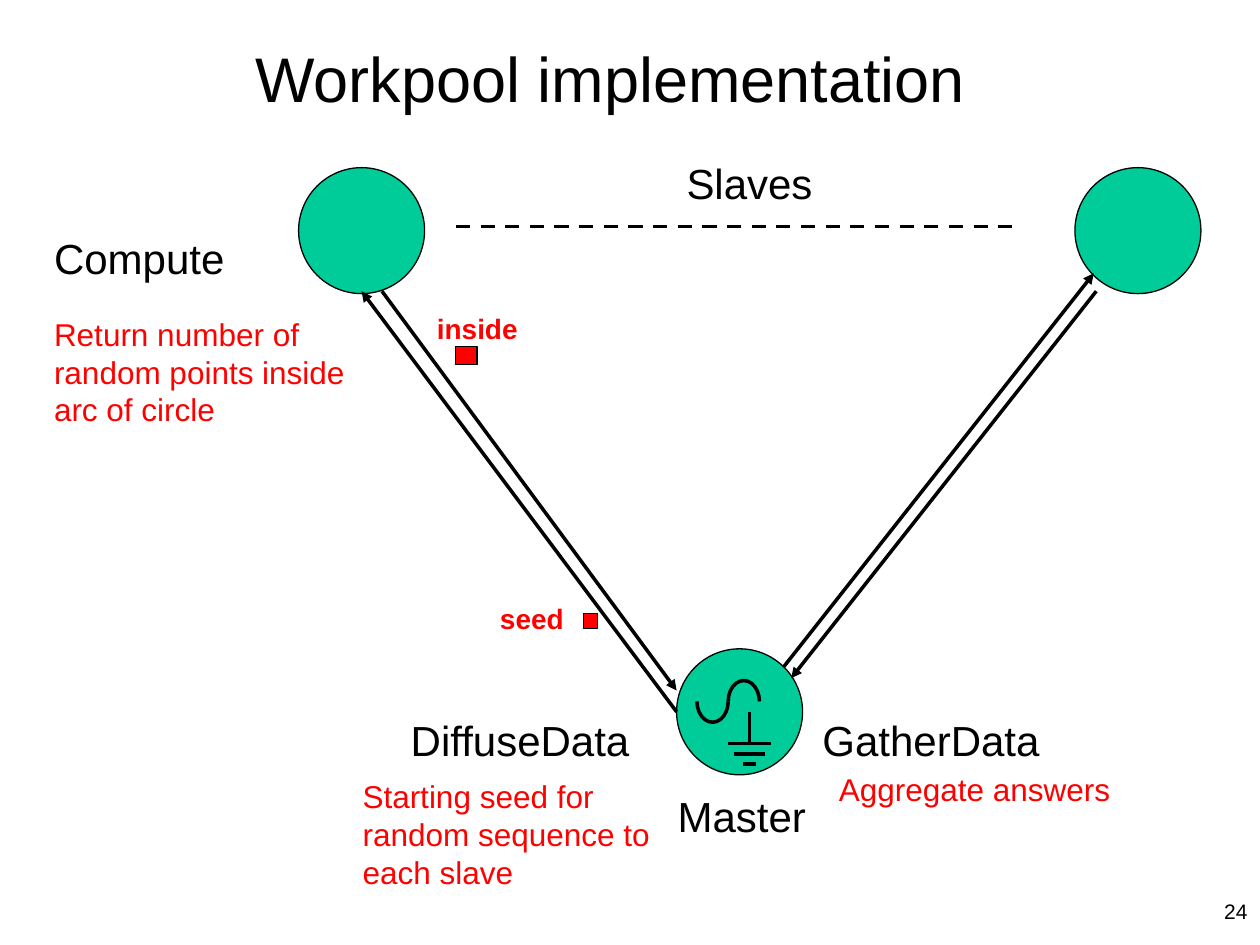
from lxml import etree
from pptx import Presentation
from pptx.dml.color import RGBColor
from pptx.enum.dml import MSO_LINE
from pptx.enum.shapes import MSO_CONNECTOR, MSO_SHAPE
from pptx.enum.text import MSO_ANCHOR, MSO_AUTO_SIZE, PP_ALIGN
from pptx.oxml.ns import qn
from pptx.util import Cm, Pt

OVAL, RECT, ARC = MSO_SHAPE.OVAL, MSO_SHAPE.RECTANGLE, MSO_SHAPE.ARC
LINE, DASH = MSO_CONNECTOR.STRAIGHT, MSO_LINE.DASH
LEFT, RIGHT, TOP = PP_ALIGN.LEFT, PP_ALIGN.RIGHT, MSO_ANCHOR.TOP
FIXED = MSO_AUTO_SIZE.NONE

THEME = {
    "font": "Arial",
    "ink": RGBColor(0, 0, 0),
    "red": RGBColor(255, 0, 0),
    "node": RGBColor(0, 204, 153),
    "thin": Pt(0.75),
    "thick": Pt(2),
    "title": (Pt(36), "ink", False),
    "label": (Pt(24), "ink", False),
    "note": (Pt(18), "red", False),
    "tag": (Pt(16), "red", True),
    "page": (Pt(12), "ink", False),
}

TITLE = ("Workpool implementation", (4.9, 0.66, 14.96, 1.8))
PAGE = ("24", (20.12, 17.98, 5.28, 1.27))
LABELS = [
    ("Slaves", (13.59, 3.05, 3.07, 1.27)),
    ("Master", (13.41, 15.82, 3.12, 1.3)),
    ("DiffuseData", (8.03, 14.27, 4.95, 1.3)),
    ("GatherData", (16.33, 14.27, 4.93, 1.3)),
    ("Compute", (0.84, 4.57, 3.99, 1.3)),
]
NOTES = [
    ("Starting seed for random sequence to each slave", (7.06, 15.54, 6.55, 2.57)),
    ("Return number of random points inside arc of circle", (0.84, 6.22, 6.43, 2.57)),
    ("Aggregate answers", (16.66, 15.39, 7.04, 1.02)),
]
TAGS = [
    ("inside", (8.56, 6.15, 2.16, 0.94), (9.19, 6.99, 0.43, 0.36)),
    ("seed", (9.83, 12.01, 1.8, 0.94), (11.76, 12.37, 0.28, 0.3)),
]
SIZE = 2.54
SLAVES = [(6.02, 3.38), (21.67, 3.38)]
MASTER = (13.64, 13.08)
ARROWS = [
    (13.64, 14.35, 7.29, 5.87),
    (15.8, 13.44, 22.05, 5.51),
    (7.7, 5.87, 13.64, 13.92),
    (22.1, 5.87, 15.95, 13.67),
]
GAP = (9.19, 4.57, 20.62, 4.57)
WAVE = [(14.05, 0, 108), (14.68, 108, 0)]
WAVE_TOP, WAVE_W, WAVE_H = 13.72, 0.63, 0.84
STEM_X, STEM_TOP = 15.11, 14.35
BARS = [(14.99, 0.43), (15.2, 0.32), (15.4, 0.13)]


def write(frame, text, role, wrap=False, align=LEFT):
    frame.text = text
    frame.word_wrap = wrap
    frame.auto_size = FIXED
    frame.vertical_anchor = TOP
    para = frame.paragraphs[0]
    para.alignment = align
    font = para.font
    size, tint, font.bold = THEME[role]
    font.size, font.name = size, THEME["font"]
    font.color.rgb = THEME[tint]


def label(tree, text, box, role, wrap=False, align=LEFT):
    frame = tree.add_textbox(*map(Cm, box)).text_frame
    write(frame, text, role, wrap, align)


def solid(tree, kind, box, tint):
    shape = tree.add_shape(kind, *map(Cm, box))
    shape.shadow.inherit = False
    shape.fill.solid()
    shape.fill.fore_color.rgb = THEME[tint]
    shape.line.color.rgb = THEME["ink"]
    shape.line.width = THEME["thin"]


def stroke(tree, ends, arrow=False, dash=False):
    link = tree.add_connector(LINE, *map(Cm, ends))
    link.line.color.rgb = THEME["ink"]
    link.line.width = THEME["thick"]
    if dash:
        link.line.dash_style = DASH
    if arrow:
        pen = link.line._get_or_add_ln()
        etree.SubElement(pen, qn("a:tailEnd"), type="triangle")
    etree.SubElement(link._element.spPr, qn("a:effectLst"))


def curve(tree, left, start, end):
    arc = tree.add_shape(ARC, *map(Cm, (left, WAVE_TOP, WAVE_W, WAVE_H)))
    arc.shadow.inherit = False
    arc.adjustments[0], arc.adjustments[1] = start, end
    arc.fill.background()
    arc.line.color.rgb = THEME["ink"]
    arc.line.width = THEME["thick"]


def master(tree):
    solid(tree, OVAL, (*MASTER, SIZE, SIZE), "node")
    for part in WAVE:
        curve(tree, *part)
    stroke(tree, (STEM_X, STEM_TOP, STEM_X, BARS[0][0]))
    for y, half in BARS:
        stroke(tree, (STEM_X - half, y, STEM_X + half, y))


def main():
    deck = Presentation()
    deck.slide_width, deck.slide_height = Cm(25.4), Cm(19.05)
    slide = deck.slides.add_slide(deck.slide_layouts[5])
    tree = slide.shapes

    text, box = TITLE
    head = tree.title
    head.left, head.top, head.width, head.height = map(Cm, box)
    write(head.text_frame, text, "title")
    label(tree, *PAGE, "page", wrap=True, align=RIGHT)

    for spot in SLAVES:
        solid(tree, OVAL, (*spot, SIZE, SIZE), "node")
    master(tree.add_group_shape().shapes)
    for ends in ARROWS:
        stroke(tree, ends, arrow=True)
    stroke(tree, GAP, dash=True)

    for text, box in LABELS:
        label(tree, text, box, "label")
    for text, box in NOTES:
        label(tree, text, box, "note", wrap=True)
    for text, box, mark in TAGS:
        label(tree, text, box, "tag")
        solid(tree, RECT, mark, "red")

    deck.save("out.pptx")


if __name__ == "__main__":
    main()
